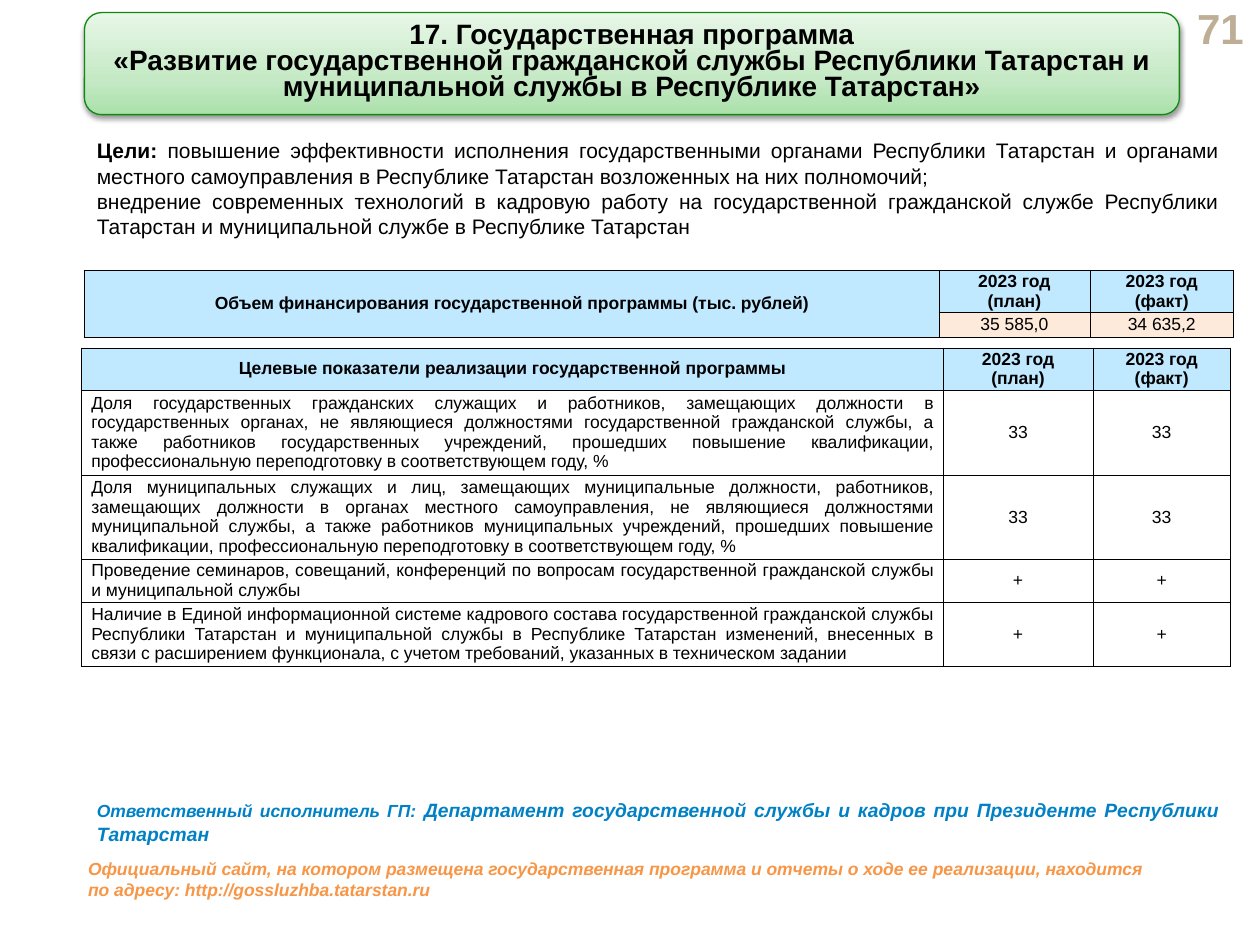
from dataclasses import dataclass

import lxml.etree
import pptx
import pptx.dml.color
import pptx.enum.shapes
import pptx.enum.text
import pptx.oxml
import pptx.oxml.ns
import pptx.util

COLUMNS, ROWS = 100, 75
WIDTH, HEIGHT = pptx.util.Inches(10), pptx.util.Inches(7.5)
FONT = "Arial"
BLACK, HEADER, AMOUNT = "000000", "C0E9FF", "FDEADA"
PLAN, FACT = "2023 год\n(план)", "2023 год\n(факт)"
ALIGN = pptx.enum.text.PP_ALIGN
ANCHOR = pptx.enum.text.MSO_ANCHOR
NS = pptx.oxml.ns.nsdecls("a")


@dataclass
class Area:
    col: float
    row: float
    cols: float
    rows: float

    def emu(self) -> tuple[int, int, int, int]:
        return across(self.col), down(self.row), across(self.cols), down(self.rows)


@dataclass
class Run:
    text: str
    size: float
    bold: bool = True


@dataclass
class Block:
    area: Area
    paragraphs: list[list[Run]]
    align: ALIGN
    color: str = BLACK
    italic: bool = False
    anchor: ANCHOR = ANCHOR.TOP


@dataclass
class Cell:
    text: str
    fill: str | None = None
    bold: bool = False
    align: ALIGN = ALIGN.CENTER
    side: float = 0


@dataclass
class Grid:
    col: float
    row: float
    widths: list[float]
    heights: list[float]
    cells: list[list[Cell]]


def across(cols: float) -> int:
    return round(WIDTH * cols / COLUMNS)


def down(rows: float) -> int:
    return round(HEIGHT * rows / ROWS)


def rgb(value: str) -> pptx.dml.color.RGBColor:
    return pptx.dml.color.RGBColor.from_string(value)


def style(font, size: float, bold: bool, color: str, italic: bool = False) -> None:
    font.name, font.size = FONT, pptx.util.Pt(size)
    font.bold, font.italic = bold, italic
    font.color.rgb = rgb(color)


def fill_text(tf, block: Block) -> None:
    tf.word_wrap = True
    tf.vertical_anchor = block.anchor
    for i, runs in enumerate(block.paragraphs):
        p = tf.paragraphs[0] if i == 0 else tf.add_paragraph()
        p.alignment = block.align
        uniform = all((run.size, run.bold) == (runs[0].size, runs[0].bold) for run in runs)
        if uniform:
            style(p.font, runs[0].size, runs[0].bold, block.color, block.italic)
        for run in runs:
            r = p.add_run()
            r.text = run.text
            if not uniform:
                style(r.font, run.size, run.bold, block.color, block.italic)


def add_text(s, block: Block) -> None:
    fill_text(s.shapes.add_textbox(*block.area.emu()).text_frame, block)


def add_banner(s, block: Block) -> None:
    sp = s.shapes.add_shape(
        pptx.enum.shapes.MSO_SHAPE.ROUNDED_RECTANGLE, *block.area.emu())
    sp.fill.gradient()
    sp.fill.gradient_angle = 90
    stops = sp._element.spPr.find(".//" + pptx.oxml.ns.qn("a:gsLst"))
    for stop in list(stops):
        stops.remove(stop)
    for share, color in ((0, "ABE1AB"), (35, "C5E9C5"), (100, "E8F7E8")):
        stops.append(pptx.oxml.parse_xml(
            f'<a:gs {NS} pos="{share * 1000}"><a:srgbClr val="{color}"/></a:gs>'))
    sp.line.color.rgb = rgb("108812")
    sp.line.width = pptx.util.Pt(0.75)
    sp.shadow.inherit = False
    effects = sp._element.spPr.find(pptx.oxml.ns.qn("a:effectLst"))
    effects.append(pptx.oxml.parse_xml(
        f'<a:outerShdw {NS} blurRad="{pptx.util.Pt(3.1)}" dist="{pptx.util.Pt(1.6)}" '
        f'dir="5400000" rotWithShape="0"><a:srgbClr val="{BLACK}">'
        '<a:alpha val="38000"/></a:srgbClr></a:outerShdw>'))
    fill_text(sp.text_frame, block)
    for p in sp.text_frame.paragraphs:
        p.line_spacing = pptx.util.Pt(15)


def add_borders(cell) -> None:
    for side in ("lnL", "lnR", "lnT", "lnB"):
        cell._tc.get_or_add_tcPr().append(pptx.oxml.parse_xml(
            f'<a:{side} {NS} w="{pptx.util.Pt(0.25)}"><a:solidFill>'
            f'<a:srgbClr val="{BLACK}"/></a:solidFill></a:{side}>'))


def draw_cell(target, cell: Cell) -> None:
    add_borders(target)
    if cell.fill:
        target.fill.solid()
        target.fill.fore_color.rgb = rgb(cell.fill)
    else:
        target.fill.background()
    target.margin_left = target.margin_right = across(cell.side)
    target.margin_top = target.margin_bottom = 0
    target.vertical_anchor = ANCHOR.MIDDLE
    target.text_frame.text = cell.text
    for p in target.text_frame.paragraphs:
        p.alignment = cell.align
        style(p.font, 10, cell.bold, BLACK)


def add_grid(s, grid: Grid):
    area = Area(grid.col, grid.row, sum(grid.widths), sum(grid.heights))
    table = s.shapes.add_table(
        len(grid.heights), len(grid.widths), *area.emu()).table
    table.first_row = table.horz_banding = False
    for column, width in zip(table.columns, grid.widths):
        column.width = across(width)
    for row, height in zip(table.rows, grid.heights):
        row.height = down(height)
    for i, row in enumerate(grid.cells):
        for j, cell in enumerate(row):
            draw_cell(table.cell(i, j), cell)
    return table


def header(title: str, side: float) -> list[Cell]:
    return [Cell(text, HEADER, True, side=side) for text in (title, PLAN, FACT)]


BANNER = Block(Area(6.7, 1, 86.9, 8.1), [
    [Run("17. Государственная программа", 16)],
    [Run("«Развитие государственной гражданской службы Республики Татарстан и муниципальной службы в Республике Татарстан»", 16)],
], ALIGN.CENTER)

TEXTS = [
    Block(Area(93.3, 0.5, 6.4, 3.4), [[Run("71", 24)]], ALIGN.RIGHT, "BFAE96", anchor=ANCHOR.MIDDLE),
    Block(Area(6.7, 10.4, 91.1, 9.1), [
        [Run("Цели: ", 12), Run("повышение эффективности исполнения государственными органами Республики Татарстан и органами местного самоуправления в Республике Татарстан возложенных на них полномочий;", 12, False)],
        [Run("внедрение современных технологий в кадровую работу на государственной гражданской службе Республики Татарстан и муниципальной службе в Республике Татарстан", 12, False)],
    ], ALIGN.JUSTIFY, anchor=ANCHOR.MIDDLE),
    Block(Area(6.7, 62.9, 91.1, 4.7), [
        [Run("Ответственный исполнитель ГП:", 10), Run(" Департамент государственной службы и кадров при Президенте Республики Татарстан", 11)],
    ], ALIGN.JUSTIFY, "0081C5", True),
    Block(Area(6, 67.6, 85.9, 4.3), [
        [Run("Официальный сайт, на котором размещена государственная программа и отчеты о ходе ее реализации, находится по адресу: http://gossluzhba.tatarstan.ru", 10)],
    ], ALIGN.LEFT, "F79646", True),
]

INDICATORS = [
    ("Доля государственных гражданских служащих и работников, замещающих должности в государственных органах, не являющиеся должностями государственной гражданской службы, а также работников государственных учреждений, прошедших повышение квалификации, профессиональную переподготовку в соответствующем году, %", "33"),
    ("Доля муниципальных служащих и лиц, замещающих муниципальные должности, работников, замещающих должности в органах местного самоуправления, не являющиеся должностями муниципальной службы, а также работников муниципальных учреждений, прошедших повышение квалификации, профессиональную переподготовку в соответствующем году, %", "33"),
    ("Проведение семинаров, совещаний, конференций по вопросам государственной гражданской службы и муниципальной службы", "+"),
    ("Наличие в Единой информационной системе кадрового состава государственной гражданской службы Республики Татарстан и муниципальной службы в Республике Татарстан изменений, внесенных в связи с расширением функционала, с учетом требований, указанных в техническом задании", "+"),
]

FUNDING = Grid(6.7, 21.45, [67.8, 12, 11.4], [3.35, 1.95], [
    header("Объем финансирования государственной программы (тыс. рублей)", 0.6),
    [Cell("", HEADER), Cell("35 585,0", AMOUNT), Cell("34 635,2", AMOUNT)],
])
TARGETS = Grid(6.45, 27.6, [68.4, 11.9, 10.9], [3.35, 6.75, 6.7, 3.4, 5.1], [
    header("Целевые показатели реализации государственной программы", 0.8),
    *([Cell(name, align=ALIGN.JUSTIFY, side=0.8), Cell(value), Cell(value)]
      for name, value in INDICATORS),
])


def main() -> None:
    prs = pptx.Presentation()
    prs.slide_width, prs.slide_height = WIDTH, HEIGHT
    s = prs.slides.add_slide(prs.slide_layouts[6])
    add_banner(s, BANNER)
    for block in TEXTS:
        add_text(s, block)
    funding = add_grid(s, FUNDING)
    funding.cell(0, 0).merge(funding.cell(1, 0))
    add_grid(s, TARGETS)
    prs.save("out.pptx")


if __name__ == "__main__":
    main()
